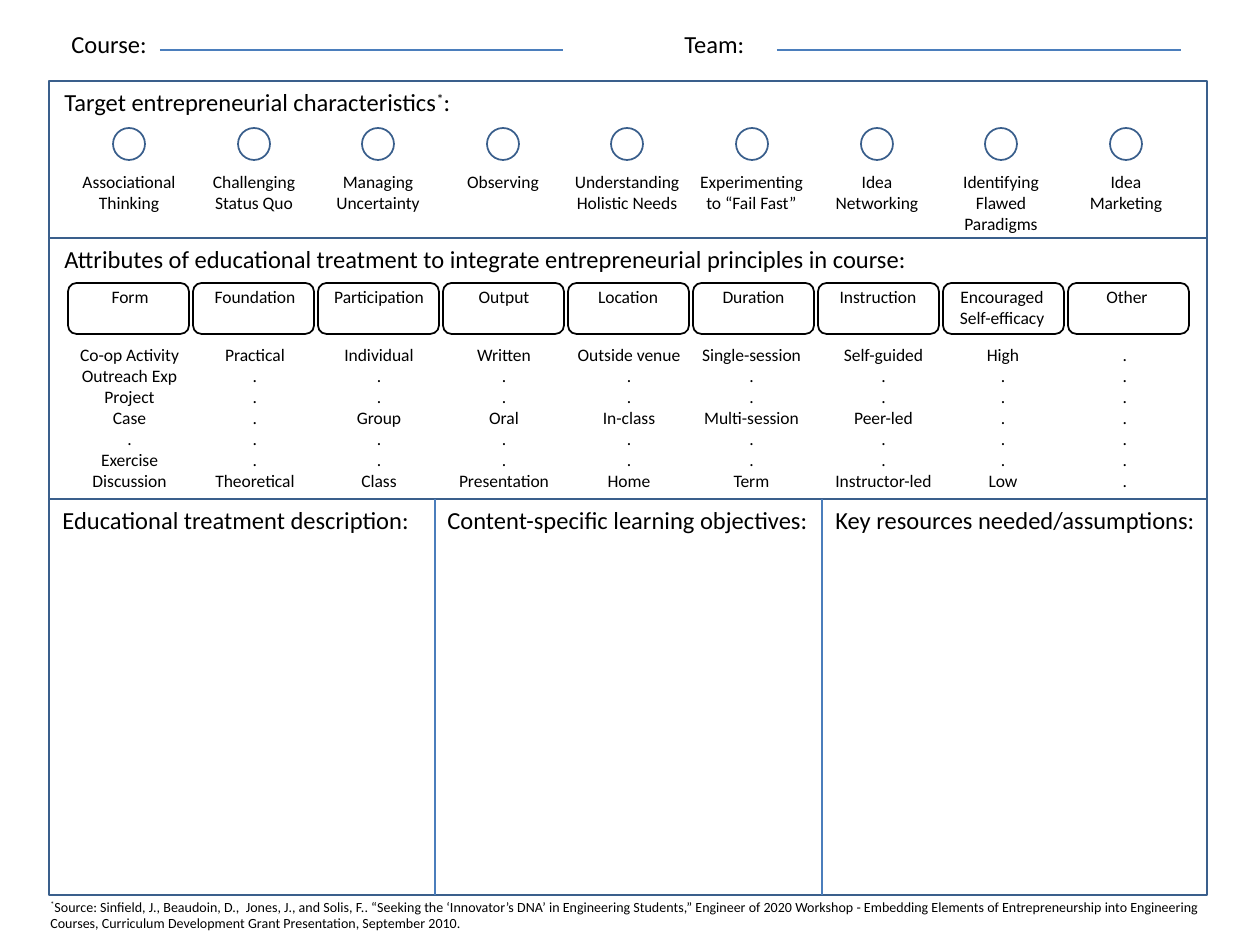
"""Build a one-page worksheet for planning entrepreneurial course treatments."""
import pptx
import pptx.dml.color
import pptx.enum.shapes
import pptx.enum.text
import pptx.oxml.ns
import pptx.util
from lxml import etree

PX = 914400 // 126
FONT = "Calibri"
COLORS = {"text": "000000", "fill": "FFFFFF", "frame": "3A5F8C", "rule": "4B7EBC"}
SHAPE = pptx.enum.shapes.MSO_SHAPE
PITCH = 124.6
FRAME_LEFT, FRAME_WIDTH = 49, 1158
LABEL_WIDTHS = (126, 126, 126, 126, 136, 139, 126, 126, 126)
VALUE_WIDTHS = (135, 126, 126, 126, 136, 139, 135, 126, 126)
VALUE_CENTERS = (130, 255, 379, 504, 629, 752, 883, 1003, 1125)
CHARACTERISTICS = (
    "Associational Thinking", "Challenging Status Quo", "Managing Uncertainty",
    "Observing", "Understanding Holistic Needs", "Experimenting to “Fail Fast”",
    "Idea Networking", "Identifying Flawed Paradigms", "Idea\nMarketing",
)
ATTRIBUTES = {
    "Form": ("Co-op Activity", "Outreach Exp", "Project", "Case", ".", "Exercise", "Discussion"),
    "Foundation": ("Practical", ".", ".", ".", ".", ".", "Theoretical"),
    "Participation": ("Individual", ".", ".", "Group", ".", ".", "Class"),
    "Output": ("Written", ".", ".", "Oral", ".", ".", "Presentation"),
    "Location": ("Outside venue", ".", ".", "In-class", ".", ".", "Home"),
    "Duration": ("Single-session", ".", ".", "Multi-session", ".", ".", "Term"),
    "Instruction": ("Self-guided", ".", ".", "Peer-led", ".", ".", "Instructor-led"),
    "Encouraged\nSelf-efficacy": ("High", ".", ".", ".", ".", ".", "Low"),
    "Other": (".",) * 7,
}
HEADINGS = (
    ("Course:", 59, 23, 102),
    ("Team:", 672, 23, 86),
    ("Target entrepreneurial characteristics*:", 52, 81, 417),
    ("Attributes of educational treatment to integrate entrepreneurial principles in course:",
     52, 238, 882),
    ("Educational treatment description:", 50, 499, 375),
    ("Content-specific learning objectives:", 435, 499, 391),
    ("Key resources needed/assumptions:", 823, 499, 388),
)
RULES = ((160, 50, 563, 50), (777, 50, 1181, 50), (435, 499, 435, 895), (822, 499, 822, 895))
SOURCE = (
    "*Source: Sinfield, J., Beaudoin, D.,  Jones, J., and Solis, F.. “Seeking the "
    "‘Innovator’s DNA’ in Engineering Students,” Engineer of 2020 Workshop - Embedding "
    "Elements of Entrepreneurship into Engineering Courses, Curriculum Development Grant "
    "Presentation, September 2010."
)


def px(*values):
    """Turn pixel lengths into EMU."""
    return [round(v) * PX for v in values]


def rgb(name):
    """Return a palette colour."""
    return pptx.dml.color.RGBColor.from_string(COLORS[name])


def add_outline(s, kind, left, top, width, height, line="frame"):
    """Add a white preset shape with a thin outline."""
    sp = s.shapes.add_shape(kind, *px(left, top, width, height))
    sp.shadow.inherit = False
    sp.fill.solid()
    sp.fill.fore_color.rgb = rgb("fill")
    sp.line.color.rgb = rgb(line)
    sp.line.width = pptx.util.Pt(1)


def add_rule(s, x1, y1, x2, y2):
    """Add a thin straight line."""
    cx = s.shapes.add_connector(pptx.enum.shapes.MSO_CONNECTOR.STRAIGHT, *px(x1, y1, x2, y2))
    cx.line.color.rgb = rgb("rule")
    cx.line.width = pptx.util.Pt(0.75)
    etree.SubElement(cx._element.spPr, pptx.oxml.ns.qn("a:effectLst"))


def add_runs(p, text, size):
    """Fill a paragraph, raising any asterisk to superscript."""
    before, star, after = text.partition("*")
    for part in filter(None, (before, star, after)):
        r = p.add_run()
        r.text = part
        r.font.name = FONT
        r.font.size = pptx.util.Pt(size)
        r.font.color.rgb = rgb("text")
        if part == "*":
            r.font._element.set("baseline", "30000")


def add_text(s, text, left, top, width, height, size, wrap=True, centered=False):
    """Add a text box with one paragraph per line of text."""
    tf = s.shapes.add_textbox(*px(left, top, width, height)).text_frame
    tf.word_wrap = wrap
    tf.auto_size = pptx.enum.text.MSO_AUTO_SIZE.SHAPE_TO_FIT_TEXT
    for i, line in enumerate(text.split("\n")):
        p = tf.add_paragraph() if i else tf.paragraphs[0]
        if centered:
            p.alignment = pptx.enum.text.PP_ALIGN.CENTER
        add_runs(p, line, size)


def add_label(s, text, center, top, width, height):
    """Add small text centred on a column."""
    add_text(s, text, center - width / 2, top, width, height, 10, centered=True)


def add_characteristics(s):
    """Add the row of circles with their labels."""
    for i, (name, width) in enumerate(zip(CHARACTERISTICS, LABEL_WIDTHS)):
        center = 129 + i * PITCH
        add_outline(s, SHAPE.OVAL, center - 16, 128, 32, 32)
        add_label(s, name, center, 165, width, 56)


def add_attributes(s):
    """Add the attribute boxes with their names and value scales."""
    for i, (name, values) in enumerate(ATTRIBUTES.items()):
        add_outline(s, SHAPE.ROUNDED_RECTANGLE, 68 + i * 125, 283, 121, 51, "text")
        add_label(s, name, 130 + i * PITCH, 280, LABEL_WIDTHS[i], 35)
        add_label(s, "\n".join(values), VALUE_CENTERS[i], 338, VALUE_WIDTHS[i], 161)


def main():
    """Build and save the worksheet."""
    prs = pptx.Presentation()
    prs.slide_width, prs.slide_height = px(1260, 945)
    s = prs.slides.add_slide(prs.slide_layouts[6])
    for top, bottom in ((238, 499), (81, 238), (499, 895)):
        add_outline(s, SHAPE.RECTANGLE, FRAME_LEFT, top, FRAME_WIDTH, bottom - top)
    for rule in RULES:
        add_rule(s, *rule)
    for text, left, top, width in HEADINGS:
        add_text(s, text, left, top, width, 43, 14, wrap=False)
    add_characteristics(s)
    add_attributes(s)
    add_text(s, SOURCE, 38, 892, 1183, 47, 8)
    prs.save("out.pptx")


if __name__ == "__main__":
    main()
